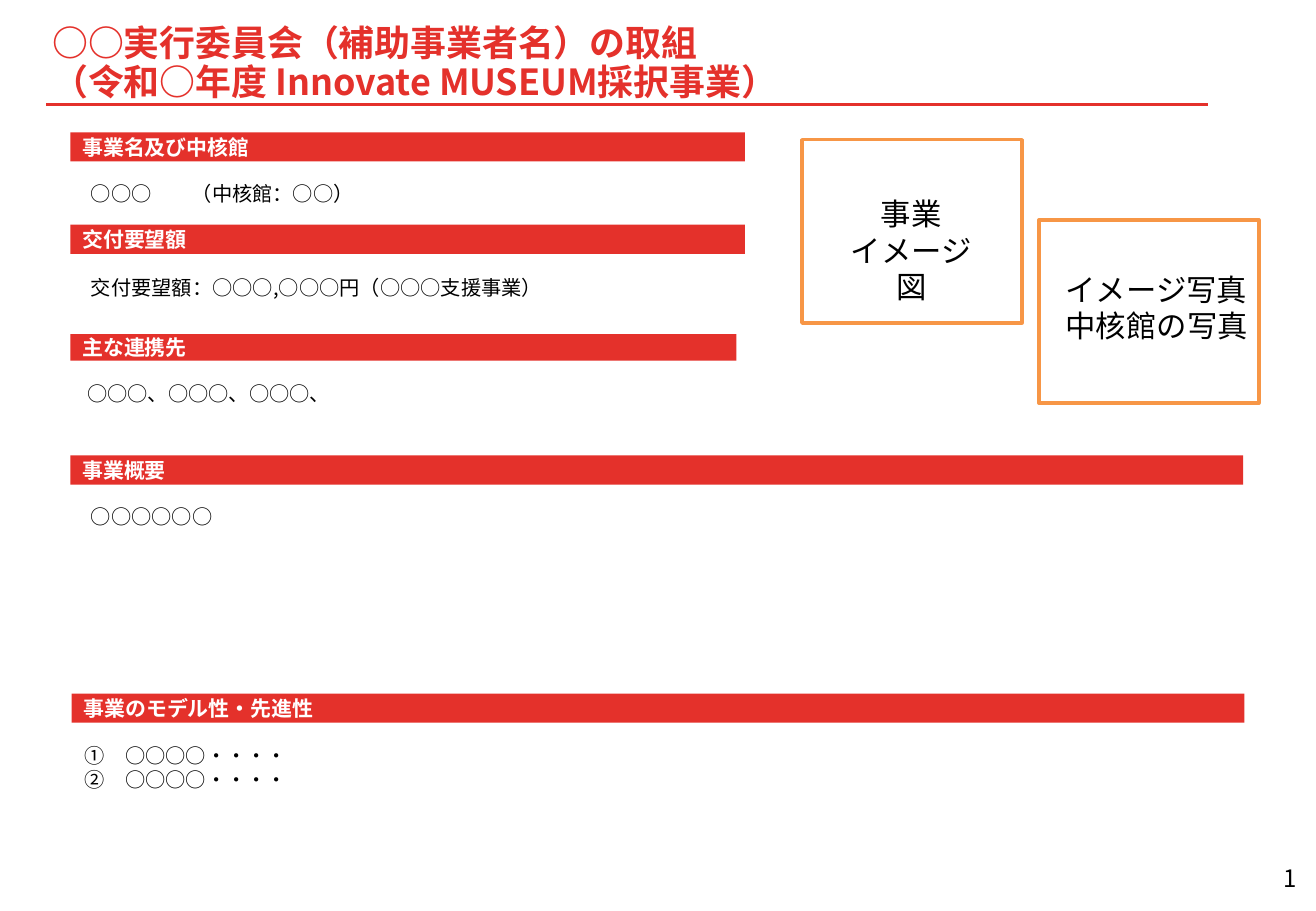
import pptx
import pptx.dml.color
import pptx.enum.shapes
import pptx.enum.text
import pptx.oxml.ns
import pptx.util
from lxml import etree

Inches = pptx.util.Inches
Pt = pptx.util.Pt
ALIGN = pptx.enum.text.PP_ALIGN
ANCHOR = pptx.enum.text.MSO_ANCHOR
qn = pptx.oxml.ns.qn

COLORS = {"red": "E4312B", "orange": "F79646", "white": "FFFFFF", "black": "000000"}
JAPANESE = "Noto Sans CJK JP"
INSETS = (0.1, 0.05, 0.1, 0.05)

SECTIONS = [
    ("事業名及び中核館", (0.58, 1.09, 5.55, 0.24),
     "○○○\t（中核館：○○）", (0.65, 1.44, 5.55, 0.3)),
    ("交付要望額", (0.58, 1.85, 5.55, 0.24),
     "交付要望額：○○○,○○○円（○○○支援事業）", (0.65, 2.22, 8.55, 0.3)),
    ("主な連携先", (0.58, 2.75, 5.48, 0.22),
     "○○○、○○○、○○○、", (0.62, 3.09, 9.04, 0.3)),
    ("事業概要", (0.58, 3.75, 9.65, 0.24),
     "○○○○○○", (0.65, 4.1, 9.55, 0.3)),
    ("事業のモデル性・先進性", (0.59, 5.71, 9.65, 0.24),
     "①　○○○○・・・・\n②　○○○○・・・・", (0.6, 6.07, 9.55, 0.5)),
]


def color(name):
    return pptx.dml.color.RGBColor.from_string(COLORS[name])


def write(shape, text, size=12, font=JAPANESE, fill="black", bold=False,
          align=ALIGN.LEFT, anchor=ANCHOR.TOP, insets=INSETS, spacing=None,
          wrap=True, tab=None):
    frame = shape.text_frame
    frame.word_wrap = wrap
    frame.vertical_anchor = anchor
    (frame.margin_left, frame.margin_top,
     frame.margin_right, frame.margin_bottom) = map(Inches, insets)
    for index, line in enumerate(text.split("\n")):
        para = frame.paragraphs[0] if index == 0 else frame.add_paragraph()
        para.alignment = align
        if spacing:
            para.line_spacing = spacing
        if tab:
            stops = etree.SubElement(para._p.get_or_add_pPr(), qn("a:tabLst"))
            etree.SubElement(stops, qn("a:tab"), pos=str(Inches(tab)), algn="l")
        span = para.add_run()
        span.text = line
        span.font.size = Pt(size)
        span.font.bold = bold
        span.font.color.rgb = color(fill)
        span.font.name = font
        east_asian = etree.SubElement(span._r.get_or_add_rPr(), qn("a:ea"))
        east_asian.set("typeface", JAPANESE)


def add_text(page, box, text, **style):
    write(page.shapes.add_textbox(*map(Inches, box)), text, **style)


def add_rectangle(page, box, fill, border=None):
    shape = page.shapes.add_shape(
        pptx.enum.shapes.MSO_SHAPE.RECTANGLE, *map(Inches, box))
    shape.shadow.inherit = False
    shape.fill.solid()
    shape.fill.fore_color.rgb = color(fill)
    if border:
        shape.line.color.rgb = color(border)
        shape.line.width = Pt(2)
    else:
        shape.line.fill.background()
    return shape


def add_header(page, box):
    left, top, width, height = box
    rule = page.shapes.add_connector(
        pptx.enum.shapes.MSO_CONNECTOR.STRAIGHT,
        Inches(left), Inches(top + height), Inches(left + width), Inches(top + height))
    rule.line.color.rgb = color("red")
    rule.line.width = Pt(2)
    etree.SubElement(rule._element.spPr, qn("a:effectLst"))
    add_text(page, (left + 0.05, top, width - 0.17, height - 0.01),
             "○○実行委員会（補助事業者名）の取組\n（令和○年度 Innovate MUSEUM採択事業）",
             size=21.3, fill="red", bold=True, anchor=ANCHOR.MIDDLE,
             insets=(0, 0, 0, 0), spacing=0.9)


def add_section(page, heading, bar_box, body, body_box):
    write(add_rectangle(page, bar_box, "red"), heading, size=12.4, fill="white",
          bold=True, anchor=ANCHOR.MIDDLE, insets=(0.1, 0, 0, 0))
    add_text(page, body_box, body, tab=0.83 if "\t" in body else None)


def add_image_frame(page, box, caption, caption_box, align):
    left, top, width, height = box
    across, down, caption_width, caption_height = caption_box
    add_rectangle(page, box, "white", border="orange")
    add_text(page, (left + across, top + down, caption_width, caption_height),
             caption, size=18, font="Arial", align=align)


def add_page_number(page, box):
    add_text(page, box, "1", size=14.2, align=ALIGN.RIGHT, anchor=ANCHOR.BOTTOM,
             insets=(0, 0, 0, 0), wrap=False)


def main():
    deck = pptx.Presentation()
    deck.slide_width = Inches(10.83)
    deck.slide_height = Inches(7.5)
    page = deck.slides.add_slide(deck.slide_layouts[6])
    add_header(page, (0.38, 0.21, 9.56, 0.65))
    for section in SECTIONS:
        add_section(page, *section)
    add_image_frame(page, (6.6, 1.15, 1.81, 1.51), "事業\nイメージ図",
                    (0.21, 0.41, 1.38, 0.71), ALIGN.CENTER)
    add_image_frame(page, (8.55, 1.81, 1.81, 1.51), "イメージ写真\n中核館の写真",
                    (0.12, 0.37, 1.81, 0.71), ALIGN.LEFT)
    add_page_number(page, (10.45, 7.14, 0.22, 0.21))
    deck.save("out.pptx")


if __name__ == "__main__":
    main()
